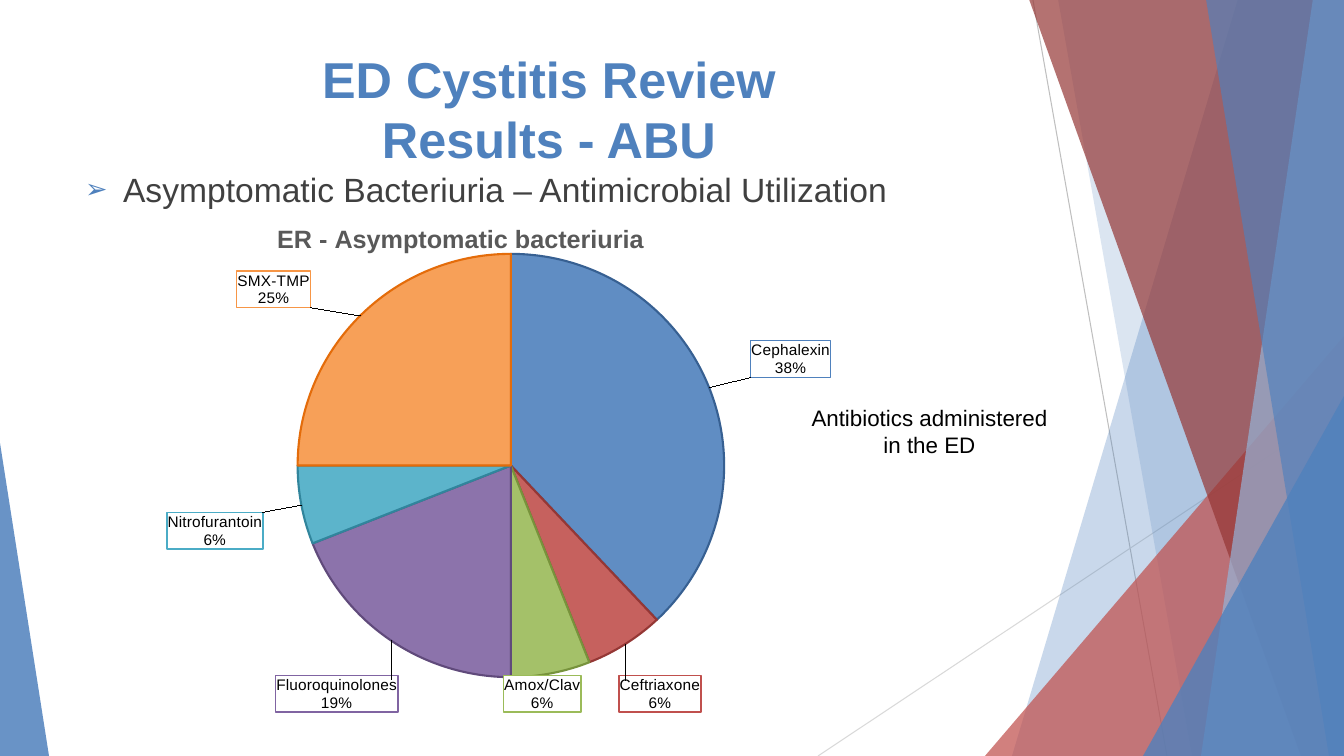
from lxml.etree import SubElement, fromstring
from pptx import Presentation
from pptx.chart.data import CategoryChartData
from pptx.dml.color import RGBColor
from pptx.enum.chart import XL_CHART_TYPE as ChartType
from pptx.enum.shapes import MSO_CONNECTOR as Connector, MSO_SHAPE as Shape
from pptx.enum.text import MSO_ANCHOR as Anchor, MSO_AUTO_SIZE as AutoSize, PP_ALIGN as Align
from pptx.oxml.ns import nsdecls, qn
from pptx.util import Pt

EMU_PER_PX = 12192000 / 1344
WIDTH, HEIGHT = 1344, 756
BLUE, RED = "4F81BD", "C0504D"

# left, top, width, height, apex position, colour, opacity
RED_TRIANGLE = (985, 336, 359, 420, 1, RED, 72)
RIGHT_TRIANGLE = (1143, 396, 201, 360, 1, BLUE, 80)
LEFT_TRIANGLE = (0, 443, 49, 313, 0, BLUE, 85)
# x at the top edge, x at the bottom edge, colour, opacity
BACK_BANDS = [(1238, 1012, BLUE, 30), (1058, 1192, BLUE, 20)]
FRONT_BANDS = [(1029, 1301, "953735", 70), (1313, 1201, "95B3D7", 70), (1206, 1329, BLUE, 65)]

# drug, percent, fill, outline, label shift in px
DRUGS = [
    ("Cephalexin", 38, BLUE, "376092", (36, -8)),
    ("Ceftriaxone", 6, RED, "953735", (-9, 31)),
    ("Amox/Clav", 6, "9BBB59", "77933C", (-48, 2)),
    ("Fluoroquinolones", 19, "8064A2", "604A7B", (10, 34)),
    ("Nitrofurantoin", 6, "4BACC6", "31859C", (-33, 6)),
    ("SMX-TMP", 25, "F79646", "E46C0A", (-45, -4)),
]


def px(*lengths):
    return [round(length * EMU_PER_PX) for length in lengths]


def rgb(code):
    return RGBColor.from_string(code)


def manual_layout(x, y, size=None):
    """Return layout XML in fractions of the chart: a shift if size is None, else a place."""
    inner = '<c:layoutTarget val="inner"/>' if size else ""
    modes = '<c:xMode val="edge"/><c:yMode val="edge"/>' if size is not None else ""
    extent = f'<c:w val="{size[0]}"/><c:h val="{size[1]}"/>' if size else ""
    return (f'<c:layout {nsdecls("c")}><c:manualLayout>{inner}{modes}'
            f'<c:x val="{x:.3f}"/><c:y val="{y:.3f}"/>{extent}</c:manualLayout></c:layout>')


class SlideBuilder:
    font = "Arial"

    def __init__(self, slide):
        self.slide = slide
        self.shapes = slide.shapes

    def paint(self, shape, color, opacity):
        """Fill without a line, opacity in percent."""
        shape.shadow.inherit = False
        shape.line.fill.background()
        self.fill(shape, color, opacity)

    def fill(self, target, color, opacity):
        target.fill.solid()
        target.fill.fore_color.rgb = rgb(color)
        properties = target.fill._xPr
        clr = properties.find(qn("a:solidFill")).find(qn("a:srgbClr"))
        SubElement(clr, qn("a:alpha")).set("val", str(opacity * 1000))

    def line(self, start, end, color):
        line = self.shapes.add_connector(Connector.STRAIGHT, *px(*start, *end))
        line.line.color.rgb = rgb(color)
        line.line.width = Pt(0.75)
        SubElement(line._element.spPr, qn("a:effectLst"))

    def band(self, top_x, bottom_x, color, opacity):
        """Fill from a slanted left edge to the right edge of the slide."""
        outline = self.shapes.build_freeform(top_x, -1, scale=EMU_PER_PX)
        outline.add_line_segments([(WIDTH, -1), (WIDTH, HEIGHT), (bottom_x, HEIGHT)])
        self.paint(outline.convert_to_shape(), color, opacity)

    def triangle(self, left, top, width, height, apex, color, opacity):
        triangle = self.shapes.add_shape(Shape.ISOSCELES_TRIANGLE, *px(left, top, width, height))
        triangle.adjustments[0] = apex
        self.paint(triangle, color, opacity)

    def set_text(self, shape, text, size, color, bold=False, align=Align.CENTER, anchor=Anchor.TOP):
        frame = shape.text_frame
        frame.word_wrap = True
        frame.auto_size = AutoSize.NONE
        frame.vertical_anchor = anchor
        paragraph = frame.paragraphs[0]
        paragraph.text = text
        paragraph.alignment = align
        self.style(paragraph.font, size, color, bold)
        return paragraph

    def style(self, font, size, color, bold=False):
        font.name = self.font
        font.size = Pt(size)
        font.bold = bold
        font.color.rgb = rgb(color)

    def placeholder(self, index, box):
        """Position a placeholder and bring it in front of the facets."""
        holder = self.slide.placeholders[index]
        holder.left, holder.top, holder.width, holder.height = px(*box)
        self.shapes._spTree.append(holder._element)
        return holder

    def title(self, text, box):
        self.set_text(self.placeholder(0, box), text, 36, BLUE, True, anchor=Anchor.MIDDLE)

    def bullet(self, text, box):
        paragraph = self.set_text(self.placeholder(1, box), text, 24, "404040", align=Align.LEFT)
        paragraph.space_before = Pt(10)
        properties = paragraph._p.get_or_add_pPr()
        indent = px(38)[0]
        properties.set("marL", str(indent))
        properties.set("indent", str(-indent))
        marks = fromstring(
            f'<a:pPr {nsdecls("a")}><a:buClr><a:srgbClr val="{BLUE}"/></a:buClr>'
            '<a:buSzPct val="80000"/><a:buFont typeface="Arial"/><a:buChar char="➢"/></a:pPr>')
        for mark in list(marks):
            properties.insert_element_before(mark, "a:tabLst", "a:defRPr", "a:extLst")

    def caption(self, text, box):
        self.set_text(self.shapes.add_textbox(*px(*box)), text, 16, "000000")

    def pie(self, heading, drugs, box):
        data = CategoryChartData()
        data.categories = [drug[0] for drug in drugs]
        data.add_series("Series 1", [drug[1] for drug in drugs])
        chart = self.shapes.add_chart(ChartType.PIE, *px(*box), data).chart
        chart.has_legend = False
        chart.font.name = "Karla"
        chart.font.size = Pt(10)
        chart.font.color.rgb = rgb("000000")
        self.chart_title(chart, heading)
        plot_area = chart._chartSpace.chart.plotArea
        for layout in plot_area.findall(qn("c:layout")):
            plot_area.remove(layout)
        plot_area.insert(0, fromstring(manual_layout(0.031, 0.082, (0.961, 0.848))))
        plot = chart.plots[0]
        plot.vary_by_categories = True
        series = plot.series[0]
        for index, (_, _, color, edge, _) in enumerate(drugs):
            point = series.points[index].format
            self.fill(point, color, 90)
            point.line.color.rgb = rgb(edge)
            point.line.width = Pt(1.5)
        labels = self.pie_labels(drugs, box[2], box[3])
        series._element.find(qn("c:cat")).addprevious(labels)

    def chart_title(self, chart, heading):
        chart.has_title = True
        paragraph = chart.chart_title.text_frame.paragraphs[0]
        paragraph.text = heading
        self.style(paragraph.font, 18, "595959", True)
        title = chart.chart_title._element
        for layout in title.findall(qn("c:layout")):
            title.remove(layout)
        title.find(qn("c:tx")).addnext(fromstring(manual_layout(0.206, 0.01, ())))
        chart.chart_title.include_in_layout = False

    def pie_labels(self, drugs, width, height):
        text = ('<c:txPr><a:bodyPr/><a:p><a:pPr><a:defRPr sz="1100" b="0"><a:solidFill>'
                '<a:srgbClr val="000000"/></a:solidFill>'
                f'<a:latin typeface="{self.font}"/></a:defRPr></a:pPr></a:p></c:txPr>')
        shown = ('<c:dLblPos val="outEnd"/><c:showLegendKey val="0"/><c:showVal val="0"/>'
                 '<c:showCatName val="1"/><c:showSerName val="0"/><c:showPercent val="1"/>'
                 '<c:showBubbleSize val="0"/><c:separator>\n</c:separator>')
        number = '<c:numFmt formatCode="0%" sourceLinked="0"/>'
        points = "".join(
            f'<c:dLbl><c:idx val="{index}"/>{manual_layout(dx / width, dy / height)}{number}'
            '<c:spPr><a:solidFill><a:srgbClr val="FFFFFF"/></a:solidFill><a:ln w="12700">'
            f'<a:solidFill><a:srgbClr val="{color}"/></a:solidFill></a:ln></c:spPr>'
            f'{text}{shown}</c:dLbl>'
            for index, (_, _, color, _, (dx, dy)) in enumerate(drugs))
        return fromstring(f'<c:dLbls {nsdecls("c", "a")}>{points}{number}{text}{shown}'
                          '<c:showLeaderLines val="1"/></c:dLbls>')


def main():
    deck = Presentation()
    deck.slide_width, deck.slide_height = px(WIDTH, HEIGHT)
    builder = SlideBuilder(deck.slides.add_slide(deck.slide_layouts[1]))
    builder.line((1033, 0), (1167, HEIGHT), "BFBFBF")
    builder.line((WIDTH, 406), (818, HEIGHT), "D9D9D9")
    for band in BACK_BANDS:
        builder.band(*band)
    builder.triangle(*RED_TRIANGLE)
    for band in FRONT_BANDS:
        builder.band(*band)
    builder.triangle(*RIGHT_TRIANGLE)
    builder.triangle(*LEFT_TRIANGLE)
    builder.title("ED Cystitis Review\vResults - ABU", (75, 40, 948, 137))
    builder.bullet("Asymptomatic Bacteriuria – Antimicrobial Utilization", (75, 164, 948, 551))
    builder.caption("Antibiotics administered in the ED", (800, 399, 259, 65))
    builder.pie("ER - Asymptomatic bacteriuria", DRUGS, (112, 213, 780, 503))
    deck.save("out.pptx")


if __name__ == "__main__":
    main()
